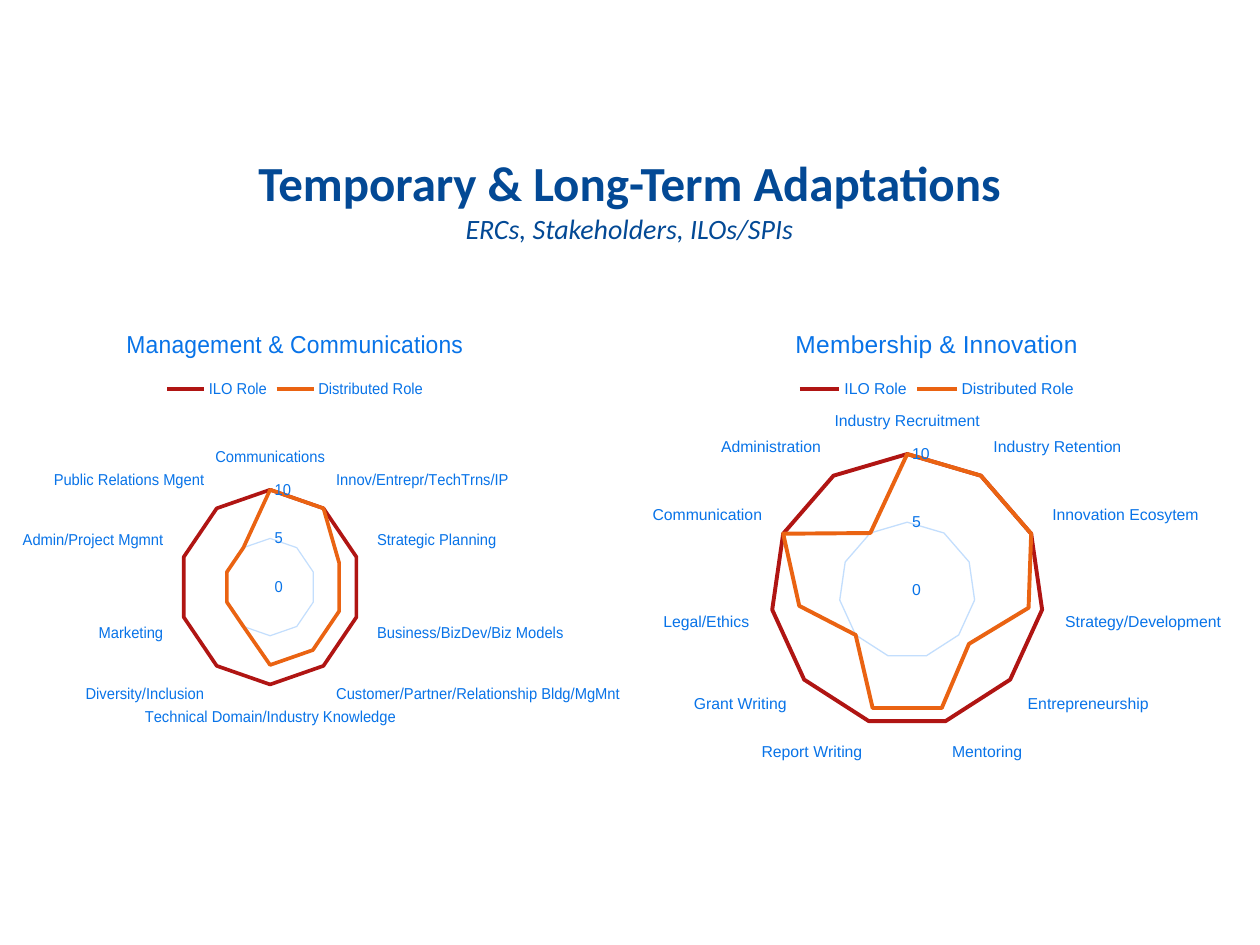
from dataclasses import dataclass

import pptx
import pptx.chart.data
import pptx.dml.color
import pptx.enum.chart
import pptx.enum.text
import pptx.util
from pptx.util import Inches


@dataclass(frozen=True)
class Theme:
    navy: str = "034995"
    blue: str = "0873E8"
    pale: str = "C3DEFD"
    red: str = "B01513"
    orange: str = "EA6312"
    head: str = "Calibri"
    body: str = "Arial"
    title: int = 28
    sub: int = 16
    chart: int = 14
    label: int = 9
    grid: float = 0.75
    curve: float = 2.25


@dataclass(frozen=True)
class Radar:
    title: str
    left: float
    width: float
    scores: dict[str, int]  # distributed-role score of each skill


THEME = Theme()
TOP, HEIGHT, LIMIT = 2.44, 3.68, 10

RADARS = [
    Radar("Membership & Innovation", 4.87, 5.13, {
        "Industry Recruitment": 10,
        "Industry Retention": 10,
        "Innovation Ecosytem": 10,
        "Strategy/Development": 9,
        "Entrepreneurship": 6,
        "Mentoring": 9,
        "Report Writing": 9,
        "Grant Writing": 5,
        "Legal/Ethics": 8,
        "Communication": 10,
        "Administration": 5,
    }),
    Radar("Management & Communications", 0.09, 4.83, {
        "Communications": 10,
        "Innov/Entrepr/TechTrns/IP": 10,
        "Strategic Planning": 8,
        "Business/BizDev/Biz Models": 8,
        "Customer/Partner/Relationship Bldg/MgMnt": 8,
        "Technical Domain/Industry Knowledge": 8,
        "Diversity/Inclusion": 5,
        "Marketing": 5,
        "Admin/Project Mgmnt": 5,
        "Public Relations Mgent": 5,
    }),
]


def style_font(font, size: float, color: str, face: str = THEME.body,
               bold: bool = False, italic: bool = False) -> None:
    font.name, font.size = face, pptx.util.Pt(size)
    font.bold, font.italic = bold, italic
    font.color.rgb = pptx.dml.color.RGBColor.from_string(color)


def add_text(para, text: str, **form) -> None:
    run = para.add_run()
    run.text = text
    style_font(run.font, **form)


def style_line(line, color: str, width: float) -> None:
    line.color.rgb = pptx.dml.color.RGBColor.from_string(color)
    line.width = pptx.util.Pt(width)


def draw_title(slide) -> None:
    shape = slide.shapes.title
    shape.left, shape.top = Inches(0.39), Inches(1.16)
    shape.width, shape.height = Inches(9.21), Inches(0.84)
    frame = shape.text_frame
    frame.word_wrap = True
    frame.auto_size = pptx.enum.text.MSO_AUTO_SIZE.NONE
    frame.vertical_anchor = pptx.enum.text.MSO_ANCHOR.TOP
    para = frame.paragraphs[0]
    para.alignment = pptx.enum.text.PP_ALIGN.CENTER
    add_text(para, "Temporary & Long-Term Adaptations", size=THEME.title,
             color=THEME.navy, face=THEME.head, bold=True)
    para.add_line_break()
    add_text(para, "ERCs, Stakeholders, ILOs/SPIs", size=THEME.sub,
             color=THEME.navy, face=THEME.head, italic=True)


def style_axes(chart) -> None:
    spokes, rings = chart.category_axis, chart.value_axis
    for axis in (spokes, rings):
        axis.major_tick_mark = pptx.enum.chart.XL_TICK_MARK.NONE
        axis.minor_tick_mark = pptx.enum.chart.XL_TICK_MARK.NONE
        style_font(axis.tick_labels.font, THEME.label, THEME.blue)
    spokes.has_major_gridlines = False
    style_line(spokes.format.line, THEME.pale, THEME.grid)
    rings.minimum_scale, rings.maximum_scale = 0, LIMIT
    rings.major_unit = LIMIT / 2
    rings.tick_labels.number_format = "General"
    rings.tick_labels.number_format_is_linked = False
    rings.format.line.fill.background()
    rings.has_major_gridlines = True
    style_line(rings.major_gridlines.format.line, THEME.pale, THEME.grid)


def draw_radar(slide, radar: Radar) -> None:
    data = pptx.chart.data.CategoryChartData()
    data.categories = list(radar.scores)
    data.add_series("ILO Role", [LIMIT] * len(radar.scores))
    data.add_series("Distributed Role", list(radar.scores.values()))
    chart = slide.shapes.add_chart(
        pptx.enum.chart.XL_CHART_TYPE.RADAR, Inches(radar.left), Inches(TOP),
        Inches(radar.width), Inches(HEIGHT), data).chart
    style_font(chart.font, THEME.label, THEME.blue)

    chart.has_title = True
    add_text(chart.chart_title.text_frame.paragraphs[0], radar.title,
             size=THEME.chart, color=THEME.blue)
    chart.has_legend = True
    chart.legend.position = pptx.enum.chart.XL_LEGEND_POSITION.TOP
    chart.legend.include_in_layout = False
    style_font(chart.legend.font, THEME.label, THEME.blue)

    style_axes(chart)
    plot = chart.plots[0]
    plot.vary_by_categories = False
    for series, color in zip(plot.series, (THEME.red, THEME.orange)):
        series.smooth = False
        series.marker.style = pptx.enum.chart.XL_MARKER_STYLE.NONE
        style_line(series.format.line, color, THEME.curve)


def main() -> None:
    deck = pptx.Presentation()
    deck.slide_width, deck.slide_height = Inches(10), Inches(7.5)
    slide = deck.slides.add_slide(deck.slide_layouts.get_by_name("Title Only"))
    draw_title(slide)
    for radar in RADARS:
        draw_radar(slide, radar)
    deck.save("out.pptx")


if __name__ == "__main__":
    main()
